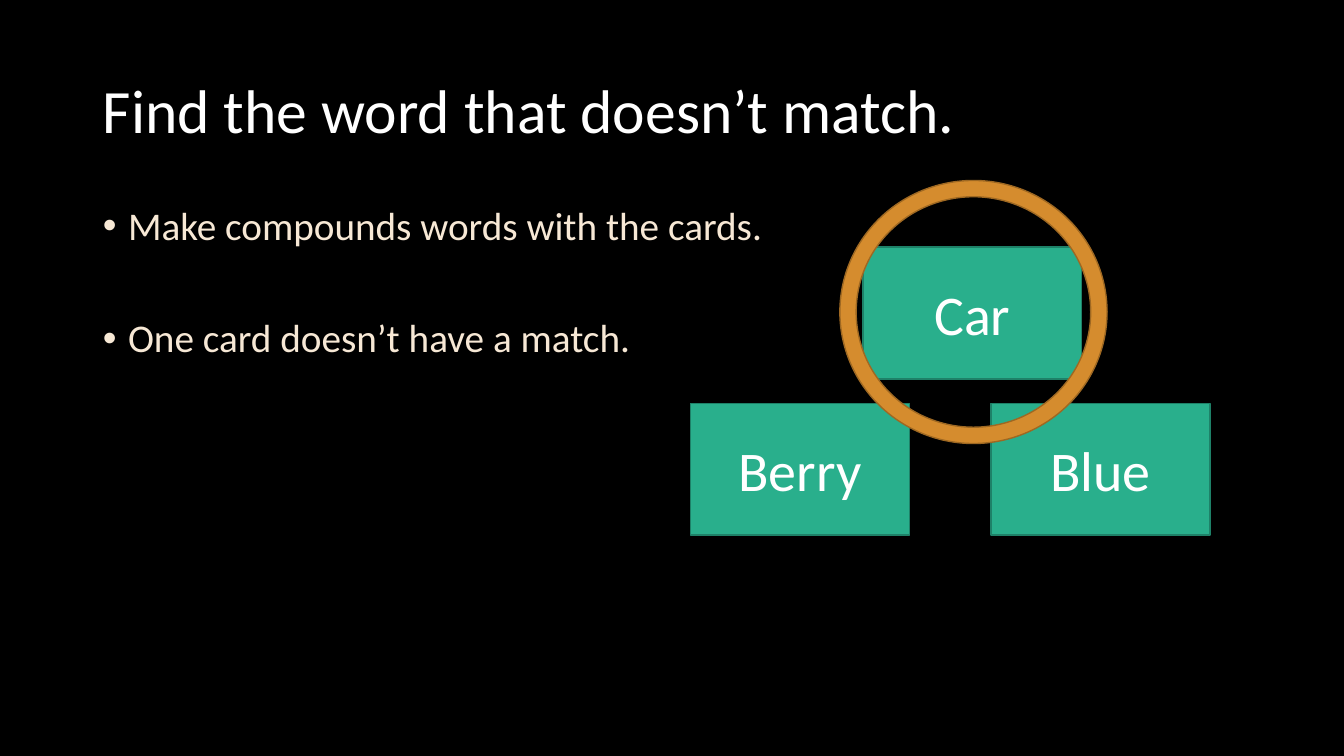
"""Build a compound-word slide with three word cards and the odd one circled."""
from pptx import Presentation
from pptx.dml.color import RGBColor
from pptx.enum.shapes import MSO_SHAPE
from pptx.enum.text import MSO_ANCHOR, MSO_AUTO_SIZE, PP_ALIGN
from pptx.util import Inches, Pt

BLACK = RGBColor(0x00, 0x00, 0x00)
WHITE = RGBColor(0xFF, 0xFF, 0xFF)
CREAM = RGBColor(0xF7, 0xE8, 0xD5)
GREEN = RGBColor(0x29, 0xAF, 0x8C)
DARK_GREEN = RGBColor(0x1E, 0x81, 0x68)
ORANGE = RGBColor(0xD5, 0x8C, 0x2E)
BROWN = RGBColor(0x9E, 0x68, 0x22)


def write(paragraph, text, size, color=WHITE, align=PP_ALIGN.LEFT, spacing=1.0, before=0):
    paragraph.alignment = align
    paragraph.line_spacing = spacing
    paragraph.space_before = Pt(before)
    run = paragraph.add_run()
    run.text = text
    run.font.name = "Calibri"
    run.font.size = Pt(size)
    run.font.color.rgb = color


def add_figure(preset, left, top, width, height, fill, line):
    figure = slide.shapes.add_shape(
        preset, Inches(left), Inches(top), Inches(width), Inches(height))
    figure.shadow.inherit = False
    figure.fill.solid()
    figure.fill.fore_color.rgb = fill
    figure.line.color.rgb = line
    figure.line.width = Pt(1)
    return figure


prs = Presentation()
prs.slide_width, prs.slide_height = Inches(13.33), Inches(7.5)
slide = prs.slides.add_slide(prs.slide_layouts[1])
slide.background.fill.solid()
slide.background.fill.fore_color.rgb = BLACK

heading, instructions = slide.placeholders
for part, top, height, anchor in [
    (heading, 0.4, 1.45, MSO_ANCHOR.MIDDLE),
    (instructions, 2, 4.76, MSO_ANCHOR.TOP),
]:
    part.left, part.top = Inches(0.92), Inches(top)
    part.width, part.height = Inches(11.5), Inches(height)
    part.text_frame.auto_size = MSO_AUTO_SIZE.NONE
    part.text_frame.vertical_anchor = anchor

write(heading.text_frame.paragraphs[0], "Find the word that doesn’t match.", 44, spacing=0.9)

first_step = instructions.text_frame.paragraphs[0]
second_step = instructions.text_frame.add_paragraph()
for step, text, before in [
    (first_step, "Make compounds words with the cards.", 10),
    (second_step, "One card doesn’t have a match.", 50),
]:
    write(step, text, 28, color=CREAM, spacing=0.9, before=before)
    properties = step._p.get_or_add_pPr()
    properties.set("marL", str(Inches(0.25)))
    properties.set("indent", str(Inches(-0.25)))

for word, left, top in [("Berry", 6.85, 4), ("Car", 8.56, 2.45), ("Blue", 9.83, 4)]:
    card = add_figure(MSO_SHAPE.RECTANGLE, left, top, 2.17, 1.31, GREEN, DARK_GREEN)
    card.text_frame.vertical_anchor = MSO_ANCHOR.MIDDLE
    write(card.text_frame.paragraphs[0], word, 40, align=PP_ALIGN.CENTER)

answer_ring = add_figure(MSO_SHAPE.DONUT, 8.33, 1.79, 2.65, 2.61, ORANGE, BROWN)
answer_ring.adjustments[0] = 0.062

prs.save("out.pptx")
